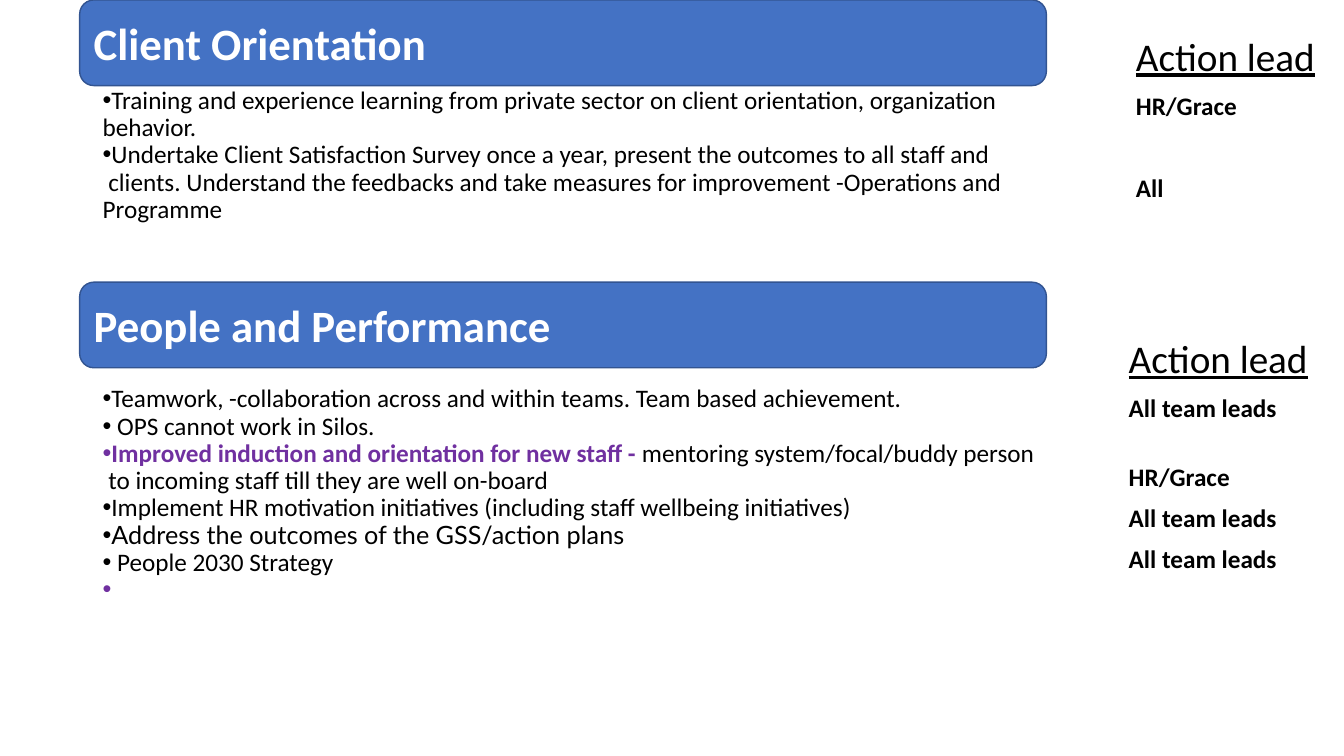
"""Build a slide of two themes, their actions and the action leads."""
from dataclasses import dataclass, field

import pptx
import pptx.dml.color
import pptx.enum.shapes
import pptx.enum.text
import pptx.oxml
import pptx.oxml.ns
import pptx.util

BLACK = pptx.dml.color.RGBColor(0x00, 0x00, 0x00)
WHITE = pptx.dml.color.RGBColor(0xFF, 0xFF, 0xFF)
BLUE = pptx.dml.color.RGBColor(0x44, 0x72, 0xC4)
NAVY = pptx.dml.color.RGBColor(0x32, 0x54, 0x91)
PURPLE = pptx.dml.color.RGBColor(0x70, 0x30, 0xA0)

SLIDE_WIDTH = pptx.util.Inches(13.333)
SLIDE_HEIGHT = pptx.util.Inches(7.5)
BULLET_INDENT = pptx.util.Inches(-0.25)

BODY = {"name": "Calibri", "size": pptx.util.Pt(18)}
BOLD = BODY | {"bold": True}
LATO = BODY | {"name": "Lato"}
BANNER = {"name": "Calibri", "size": pptx.util.Pt(32), "bold": True}
HEADING = {"name": "Calibri", "size": pptx.util.Pt(28), "underline": True}


@dataclass(frozen=True)
class Area:
    """Place on the slide, in percent of its width and height."""
    left: float
    top: float
    width: float
    height: float

    def box(self) -> tuple[int, int, int, int]:
        """Return left, top, width and height in slide units."""
        return (int(SLIDE_WIDTH * self.left / 100), int(SLIDE_HEIGHT * self.top / 100),
                int(SLIDE_WIDTH * self.width / 100), int(SLIDE_HEIGHT * self.height / 100))


@dataclass(frozen=True)
class Phrase:
    """Stretch of text in one format."""
    text: str
    style: dict = field(default_factory=lambda: BODY)
    color: pptx.dml.color.RGBColor = BLACK


@dataclass(frozen=True)
class Line:
    """Paragraph with its bullet and the space above it in points."""
    phrases: tuple[Phrase, ...]
    bullet: bool = False
    before: float = 0


def action(text: str, style: dict = BODY, before: float = 0) -> Line:
    """Return a bulleted action."""
    return Line((Phrase(text, style),), True, before)


def continuation(text: str) -> Line:
    """Return a line that carries on the action above it."""
    return Line((Phrase(text),))


def lead(text: str, before: float = 10) -> Line:
    """Return the name of an action lead."""
    return Line((Phrase(text, BOLD),), before=before)


BANNERS = (
    (Area(5.93, 0, 71.93, 11.33), "Client Orientation"),
    (Area(5.93, 37.33, 71.93, 11.33), "People and Performance"),
)
LEAD_HEADING = Line((Phrase("Action lead", HEADING),), before=10)
TEXTS = (
    (Area(6.9, 10.93, 77.25, 79.07), (
        action("Training and experience learning from private sector on client orientation, organization"),
        continuation("behavior."),
        action("Undertake Client Satisfaction Survey once a year, present the outcomes to all staff and"),
        continuation(" clients. Understand the feedbacks and take measures for improvement"
                     " -Operations and Programme"),
        action("Teamwork, -collaboration across and within teams. Team based achievement.", before=116),
        action(" OPS cannot work in Silos."),
        Line((Phrase("Improved induction and orientation for new staff -", BOLD, PURPLE),
              Phrase(" mentoring system/focal/buddy person")), True),
        continuation(" to incoming staff till they are well on-board"),
        action("Implement HR motivation initiatives (including staff wellbeing initiatives)"),
        action("Address the outcomes of the GSS/action plans", LATO),
        action(" People 2030 Strategy"),
        Line((Phrase(" ", BOLD, PURPLE),), True),
    )),
    (Area(83.25, 44.27, 16.73, 42), (
        LEAD_HEADING, lead("All team leads"), lead("HR/Grace", 29.5),
        lead("All team leads"), lead("All team leads"),
    )),
    (Area(83.78, 4.27, 16.73, 38.67), (
        LEAD_HEADING, lead("HR/Grace"), lead("All", 39.5),
    )),
)


def add_phrase(paragraph, phrase: Phrase) -> None:
    """Append a formatted run to a paragraph."""
    run = paragraph.add_run()
    run.text = phrase.text
    for name, value in phrase.style.items():
        setattr(run.font, name, value)
    run.font.color.rgb = phrase.color


def add_bullet(paragraph) -> None:
    """Give a paragraph a hanging round bullet."""
    properties = paragraph._p.get_or_add_pPr()
    properties.set("marL", "0")
    properties.set("indent", str(int(BULLET_INDENT)))
    namespace = pptx.oxml.ns.nsdecls("a")
    for markup in (f'<a:buFont {namespace} typeface="Arial"/>', f'<a:buChar {namespace} char="•"/>'):
        properties.append(pptx.oxml.parse_xml(markup))


def add_text(slide, area: Area, lines: tuple[Line, ...]) -> None:
    """Draw a wrapped block of lines."""
    frame = slide.shapes.add_textbox(*area.box()).text_frame
    frame.word_wrap = True
    for index, line in enumerate(lines):
        paragraph = frame.add_paragraph() if index else frame.paragraphs[0]
        spacing = {"line_spacing": 0.9, "space_before": pptx.util.Pt(line.before)}
        for name, value in spacing.items():
            setattr(paragraph, name, value)
        if line.bullet:
            add_bullet(paragraph)
        for phrase in line.phrases:
            add_phrase(paragraph, phrase)


def add_banner(slide, area: Area, title: str) -> None:
    """Draw a rounded banner with its title."""
    banner = slide.shapes.add_shape(pptx.enum.shapes.MSO_SHAPE.ROUNDED_RECTANGLE, *area.box())
    banner.shadow.inherit = False
    banner.fill.solid()
    banner.fill.fore_color.rgb = BLUE
    banner.line.color.rgb = NAVY
    banner.line.width = pptx.util.Pt(1)
    banner.text_frame.word_wrap = True
    banner.text_frame.vertical_anchor = pptx.enum.text.MSO_ANCHOR.MIDDLE
    paragraph = banner.text_frame.paragraphs[0]
    paragraph.alignment = pptx.enum.text.PP_ALIGN.LEFT
    add_phrase(paragraph, Phrase(title, BANNER, WHITE))


def main() -> None:
    """Build and save the presentation."""
    presentation = pptx.Presentation()
    presentation.slide_width = SLIDE_WIDTH
    presentation.slide_height = SLIDE_HEIGHT
    slide = presentation.slides.add_slide(presentation.slide_layouts[6])
    actions, *leads = TEXTS
    add_text(slide, *actions)
    for area, title in BANNERS:
        add_banner(slide, area, title)
    for area, lines in leads:
        add_text(slide, area, lines)
    presentation.save("out.pptx")


if __name__ == "__main__":
    main()
